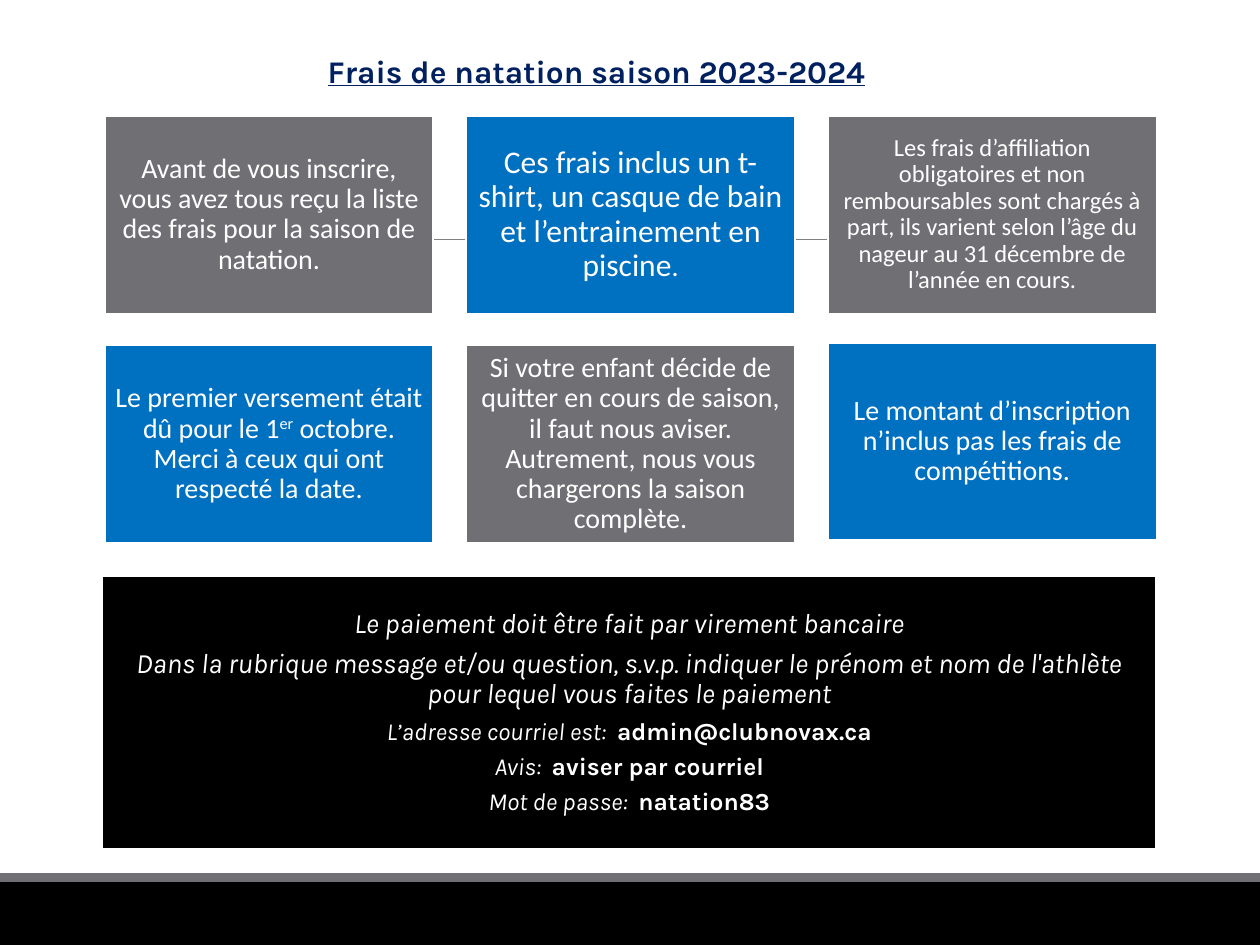
import pptx
import pptx.util
import pptx.dml.color
import pptx.enum.shapes
import pptx.enum.text
import pptx.oxml.ns
import lxml.etree

Inches, Pt = pptx.util.Inches, pptx.util.Pt
SHAPE = pptx.enum.shapes.MSO_SHAPE
ANCHOR = pptx.enum.text.MSO_ANCHOR
ALIGN = pptx.enum.text.PP_ALIGN

COLORS = {"black": "000000", "grey": "6F6F74", "blue": "0070C0",
          "white": "FFFFFF", "navy": "002060", "rule": "808080"}
WIDTH, HEIGHT = 10, 7.5

# Card grid
CARD_W, CARD_H = 2.61, 1.57
COL_STEP = 2.87
LEFT = 0.83
ROW_TOPS = (0.92, 2.74)

# Each card: runs as (text, size, superscript)
CARDS = [
    [("Avant de vous inscrire, vous avez tous reçu la liste des frais "
      "pour la saison de natation.", 16, False)],
    [("Ces frais inclus un t-shirt, un casque de bain et l’entrainement "
      "en piscine", 18, False), (".", 16, False)],
    [("Les frais d’affiliation obligatoires et non remboursables sont chargés "
      "à part, ils varient selon l’âge du nageur au 31 décembre de l’année "
      "en cours.", 14, False)],
    [("Le premier versement était dû pour le 1", 16, False), ("er", 16, True),
     (" octobre. Merci à ceux qui ont respecté la date.", 16, False)],
    [("Si votre enfant décide de quitter en cours de saison, il faut nous "
      "aviser. Autrement, nous vous chargerons la saison complète.", 16, False)],
    [("Le montant d’inscription n’inclus pas les frais de compétitions.",
      16, False)],
]

INSTRUCTIONS = [
    "Le paiement doit être fait par virement bancaire",
    "Dans la rubrique message et/ou question, s.v.p. indiquer le prénom et nom "
    "de l'athlète pour lequel vous faites le paiement",
]
DETAILS = [
    ("L’adresse courriel est:  ", "admin@clubnovax.ca"),
    ("Avis:  ", "aviser par courriel"),
    ("Mot de passe:  ", "natation83"),
]


def rgb(name):
    return pptx.dml.color.RGBColor.from_string(COLORS[name])


def add_box(slide, box, fill, line=None):
    sp = slide.shapes.add_shape(SHAPE.RECTANGLE, *map(Inches, box))
    sp.shadow.inherit = False
    sp.fill.solid()
    sp.fill.fore_color.rgb = rgb(fill)
    if line:
        sp.line.color.rgb = rgb(line)
        sp.line.width = Pt(1.25)
    else:
        sp.line.fill.background()
    return sp


def set_frame(sp, inset):
    tf = sp.text_frame
    tf.word_wrap = True
    tf.vertical_anchor = ANCHOR.MIDDLE
    tf.margin_left = tf.margin_right = Inches(inset)
    tf.margin_top = tf.margin_bottom = Inches(inset)
    return tf


def format_paragraph(p, font, size):
    p.alignment = ALIGN.CENTER
    p.line_spacing = 0.9
    p.space_after = Pt(0.35 * size)
    p.font.name = font
    p.font.size = Pt(size)
    p.font.color.rgb = rgb("white")


def add_run(p, text):
    r = p.add_run()
    r.text = text
    return r


def add_footer(slide, box):
    """Black band topped by a thin grey strip."""
    left, top, width, height = box
    strip = 0.07
    add_box(slide, (left, top + strip, width, height - strip), "black")
    add_box(slide, (left, top, width, strip), "grey")


def add_rule(slide, left, right, y):
    line = slide.shapes.add_connector(
        pptx.enum.shapes.MSO_CONNECTOR.STRAIGHT,
        Inches(left), Inches(y), Inches(right), Inches(y))
    line.line.color.rgb = rgb("rule")
    line.line.width = Pt(0.5)
    lxml.etree.SubElement(line._element.spPr, pptx.oxml.ns.qn("a:effectLst"))


def add_title(slide, box, text):
    title = slide.shapes.title
    title.left, title.top, title.width, title.height = map(Inches, box)
    tf = title.text_frame
    tf.text = text
    tf.vertical_anchor = ANCHOR.TOP
    tf.auto_size = pptx.enum.text.MSO_AUTO_SIZE.NONE
    p = tf.paragraphs[0]
    p.alignment = ALIGN.LEFT
    p.font.name, p.font.size = "Karla", Pt(18)
    p.font.bold = p.font.underline = True
    p.font.color.rgb = rgb("navy")


def add_card(slide, box, fill, runs):
    size = runs[0][1]
    tf = set_frame(add_box(slide, box, fill, "white"), 0.06 if size < 16 else 0.07)
    p = tf.paragraphs[0]
    format_paragraph(p, "Calibri", size)
    for text, run_size, raised in runs:
        r = add_run(p, text)
        if run_size != size:
            r.font.size = Pt(run_size)
        if raised:
            r._r.get_or_add_rPr().set("baseline", "30000")


def add_payment_panel(slide, box):
    tf = set_frame(add_box(slide, box, "black", "white"), 0.07)
    rows = [(text, None) for text in INSTRUCTIONS] + DETAILS
    for i, (label, value) in enumerate(rows):
        p = tf.add_paragraph() if i else tf.paragraphs[0]
        format_paragraph(p, "Karla", 14 if value else 16)
        add_run(p, label).font.italic = True
        if value:
            add_run(p, value).font.bold = True


def main():
    prs = pptx.Presentation()
    prs.slide_width, prs.slide_height = Inches(WIDTH), Inches(HEIGHT)
    slide = prs.slides.add_slide(prs.slide_layouts[5])

    # Background parts
    add_footer(slide, (0, 6.93, WIDTH, HEIGHT - 6.93))
    add_rule(slide, 0.98, 9.15, 1.9)

    add_title(slide, (2.5, 0.36, 5, 0.4), "Frais de natation saison 2023-2024")

    # Cards in alternating colours; the last one sits slightly higher
    for i, runs in enumerate(CARDS):
        row, col = divmod(i, 3)
        top = ROW_TOPS[row] - (0.02 if i == len(CARDS) - 1 else 0)
        add_card(slide, (LEFT + col * COL_STEP, top, CARD_W, CARD_H),
                 ("grey", "blue")[i % 2], runs)

    add_payment_panel(slide, (0.81, 4.57, 8.37, 2.17))
    prs.save("out.pptx")


if __name__ == "__main__":
    main()
